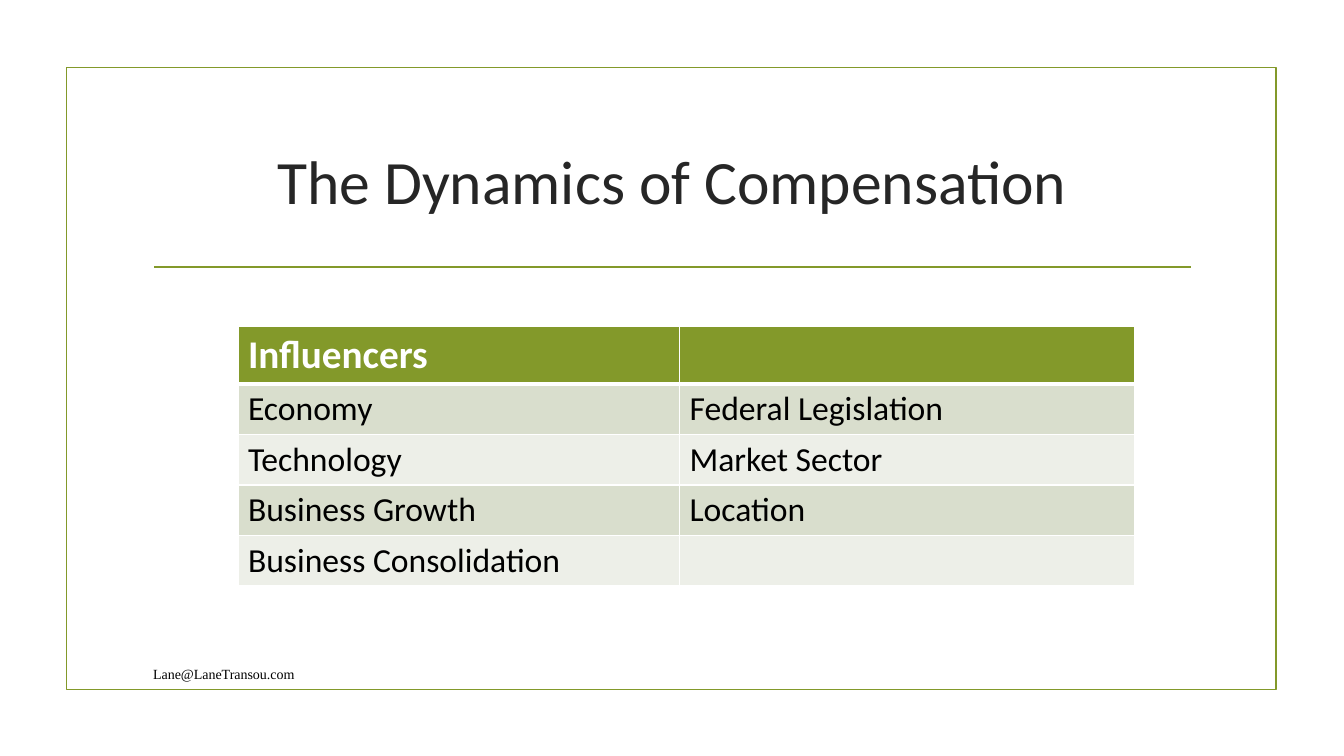
import pptx
import pptx.dml.color
import pptx.enum.shapes
import pptx.enum.text
import pptx.oxml
import pptx.oxml.ns
import pptx.util
from pptx.util import Inches

GREEN, WHITE, BLACK, CHARCOAL = "83992A", "FFFFFF", "000000", "262626"
BANDS = ["D9DECD", "EDEFE8"]


def color(hex_code):
    return pptx.dml.color.RGBColor.from_string(hex_code)


class Page:
    """One slide together with its fonts and line style."""

    body_font = "Calibri"
    footer_font = "Times New Roman"
    line_width = pptx.util.Pt(1.25)

    def __init__(self, deck):
        self.slide = deck.slides.add_slide(deck.slide_layouts[6])
        self.shapes = self.slide.shapes

    def style_line(self, line):
        line.color.rgb = color(GREEN)
        line.width = self.line_width

    def frame(self, left, top, width, height):
        box = self.shapes.add_shape(
            pptx.enum.shapes.MSO_SHAPE.RECTANGLE, left, top, width, height)
        box.shadow.inherit = False
        box.fill.background()
        self.style_line(box.line)

    def rule(self, left, right, height):
        rule = self.shapes.add_connector(
            pptx.enum.shapes.MSO_CONNECTOR.STRAIGHT, left, height, right, height)
        self.style_line(rule.line)
        properties = rule._element.spPr
        properties.append(pptx.oxml.parse_xml(
            f"<a:effectLst {pptx.oxml.ns.nsdecls('a')}/>"))

    def add_span(self, para, words, size, font, ink, bold=False):
        span = para.add_run()
        span.text = words
        span.font.size = pptx.util.Pt(size)
        span.font.name = font
        span.font.bold = bold
        span.font.color.rgb = color(ink)

    def text(self, left, top, width, height, words, size, font, ink, align):
        box = self.shapes.add_textbox(left, top, width, height)
        box.text_frame.word_wrap = True
        box.text_frame.vertical_anchor = pptx.enum.text.MSO_ANCHOR.MIDDLE
        para = box.text_frame.paragraphs[0]
        para.alignment = align
        self.add_span(para, words, size, font, ink)

    def border(self, cell, bottom, top):
        widths = {"lnL": 1, "lnR": 1, "lnT": top, "lnB": bottom}
        properties = cell._tc.get_or_add_tcPr()
        for place, (side, points) in enumerate(widths.items()):
            properties.insert(place, pptx.oxml.parse_xml(
                f'<a:{side} {pptx.oxml.ns.nsdecls("a")} w="{pptx.util.Pt(points)}">'
                f'<a:solidFill><a:srgbClr val="{WHITE}"/></a:solidFill></a:{side}>'))

    def table(self, left, top, column_widths, row_heights, rows):
        grid = self.shapes.add_table(
            len(rows), len(column_widths), left, top,
            sum(column_widths), sum(row_heights)).table
        for column, width in zip(grid.columns, column_widths):
            column.width = width
        for number, (row, height) in enumerate(zip(rows, row_heights)):
            grid.rows[number].height = height
            header = number == 0
            for position, words in enumerate(row):
                cell = grid.cell(number, position)
                cell.fill.solid()
                cell.fill.fore_color.rgb = color(
                    GREEN if header else BANDS[(number - 1) % 2])
                self.border(cell, bottom=3 if header else 1,
                            top=3 if number == 1 else 1)
                if words:
                    self.add_span(cell.text_frame.paragraphs[0], words,
                                  28 if header else 24, self.body_font,
                                  WHITE if header else BLACK, header)


def main():
    deck = pptx.Presentation()
    deck.slide_width, deck.slide_height = Inches(13.33), Inches(7.5)
    page = Page(deck)
    align = pptx.enum.text.PP_ALIGN

    # Frame and rule under the title
    page.frame(Inches(0.66), Inches(0.67), Inches(12), Inches(6.17))
    page.rule(Inches(1.53), Inches(11.81), Inches(2.65))

    # Title and footer
    page.text(Inches(1.42), Inches(1.07), Inches(10.5), Inches(1.43),
              "The Dynamics of Compensation", 44, page.body_font, CHARCOAL,
              align.CENTER)
    page.text(Inches(1.42), Inches(6.53), Inches(7.99), Inches(0.31),
              "Lane@LaneTransou.com", 10, page.footer_font, BLACK, align.LEFT)

    # Influencers table
    page.table(Inches(2.36), Inches(3.24), [Inches(4.38), Inches(4.51)],
               [Inches(0.57)] + [Inches(0.5)] * 4,
               [("Influencers", ""),
                ("Economy", "Federal Legislation"),
                ("Technology", "Market Sector"),
                ("Business Growth", "Location"),
                ("Business Consolidation", "")])

    deck.save("out.pptx")


if __name__ == "__main__":
    main()
